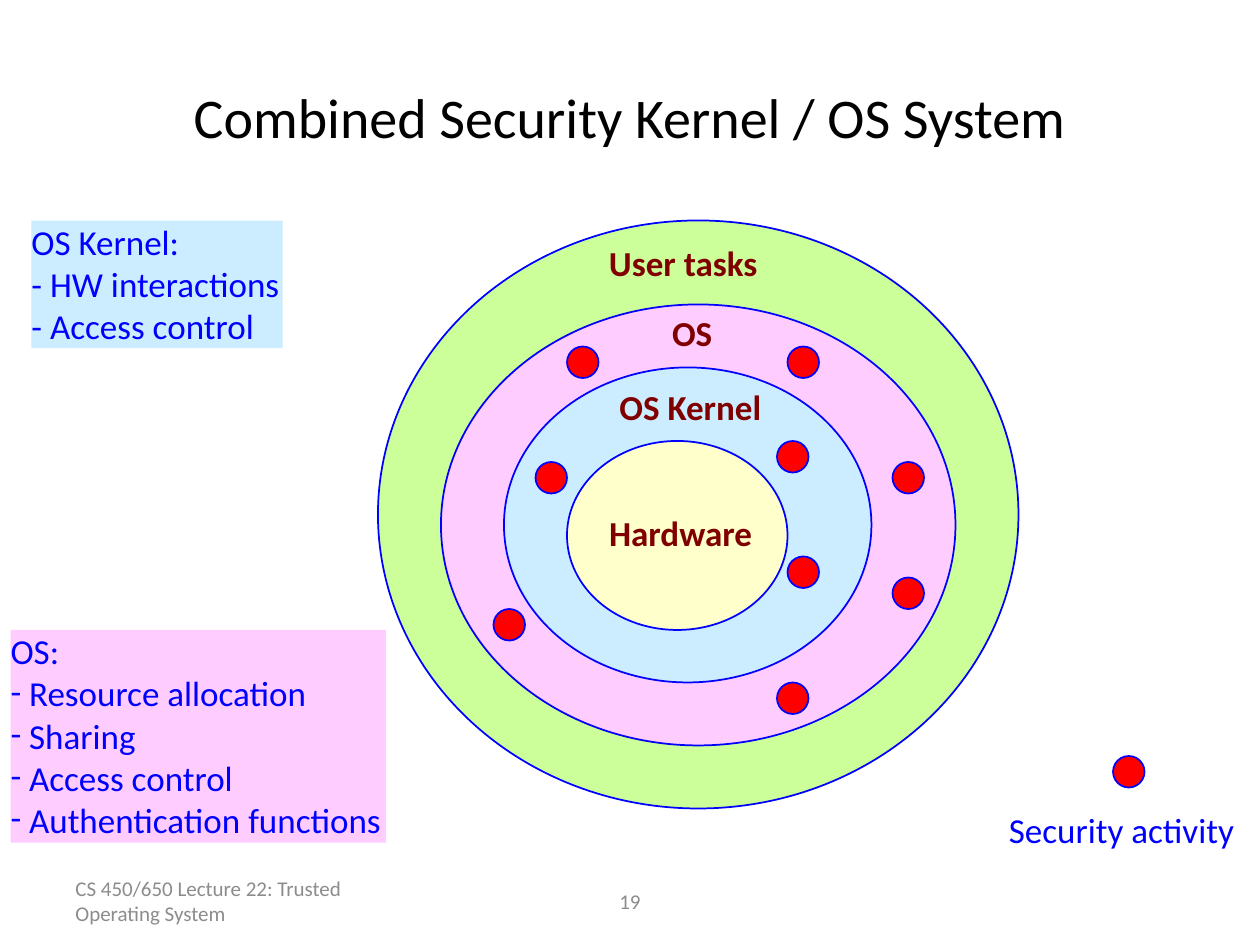
from lxml.etree import SubElement
from pptx import Presentation
from pptx.dml.color import RGBColor
from pptx.enum.shapes import MSO_SHAPE
from pptx.enum.text import MSO_ANCHOR, MSO_AUTO_SIZE, PP_ALIGN
from pptx.oxml.ns import qn
from pptx.util import Pt

BLUE, MAROON, GREY, RED = "0000FF", "800000", "8C8C8C", "FF0000"
GREEN, PINK, SKY, CREAM = "CCFF99", "FFCCFF", "CCECFF", "FFFFCC"
DOT_SIZE = 18
TIGHT = {"margin_left": 0, "margin_top": 0, "margin_right": 0, "margin_bottom": 0,
         "word_wrap": False, "auto_size": MSO_AUTO_SIZE.SHAPE_TO_FIT_TEXT,
         "vertical_anchor": MSO_ANCHOR.TOP}
MIDDLE = {"word_wrap": True, "vertical_anchor": MSO_ANCHOR.MIDDLE}

RINGS = [
    (216, 126, 366, 336, GREEN),
    (252, 174, 294, 252, PINK),
    (288, 210, 210, 180, SKY),
    (324, 252, 126, 108, CREAM),
]
RING_LABELS = [
    ("User tasks", 348, 138, 86),
    ("OS", 384, 178, 26),
    ("OS Kernel", 354, 220.5, 83),
    ("Hardware", 348, 292.5, 84),
]
KERNEL_ACTIVITIES = [(444, 252), (450, 318), (306, 264)]
OS_ACTIVITIES = [(510, 264), (510, 330), (450, 198), (324, 198), (444, 390), (282, 348)]
LEGEND_ACTIVITY = (636, 432)


def rgb(value):
    """Turn a hex string into a colour."""
    return RGBColor.from_string(value)


def apply(target, settings):
    """Set every attribute named in a dict."""
    for name, value in settings.items():
        setattr(target, name, value)


def write(frame, lines, size, color, layout, bold=False, align=PP_ALIGN.LEFT):
    """Fill a text frame with one formatted paragraph per line."""
    apply(frame, layout)
    frame.text = "\n".join(lines)
    for paragraph in frame.paragraphs:
        paragraph.alignment = align
        for run in paragraph.runs:
            apply(run.font, {"name": "Calibri", "size": Pt(size), "bold": bold})
            run.font.color.rgb = rgb(color)


def add_dash(paragraph):
    """Give a paragraph a dash as its bullet."""
    properties = paragraph._p.get_or_add_pPr()
    SubElement(properties, qn("a:buFont"), typeface="Calibri")
    SubElement(properties, qn("a:buChar"), char="-")


def add_text(slide, text, box, size, color, layout, **style):
    """Add a text box with a single paragraph."""
    label = slide.shapes.add_textbox(*map(Pt, box))
    write(label.text_frame, [text], size, color, layout, **style)


def add_filled(slide, kind, box, fill):
    """Add a flat filled shape."""
    shape = slide.shapes.add_shape(kind, *map(Pt, box))
    shape.shadow.inherit = False
    shape.fill.solid()
    shape.fill.fore_color.rgb = rgb(fill)
    return shape


def add_oval(slide, box, fill):
    """Add an ellipse with a blue outline."""
    oval = add_filled(slide, MSO_SHAPE.OVAL, box, fill)
    oval.line.color.rgb = rgb(BLUE)
    oval.line.width = Pt(1)


def add_duties(slide, box, fill, lines, dashed=False):
    """Add a coloured panel with a heading and its duties."""
    panel = add_filled(slide, MSO_SHAPE.RECTANGLE, box, fill)
    panel.line.fill.background()
    write(panel.text_frame, lines, 20, BLUE, TIGHT)
    if dashed:
        for duty in panel.text_frame.paragraphs[1:]:
            add_dash(duty)


def add_title(slide, text):
    """Place and format the slide title."""
    title = slide.shapes.title
    apply(title, {"left": Pt(36), "top": Pt(21.6), "width": Pt(648), "height": Pt(90)})
    write(title.text_frame, [text], 32, "000000", MIDDLE, align=PP_ALIGN.CENTER)


def main():
    """Build the slide and save it."""
    deck = Presentation()
    apply(deck, {"slide_width": Pt(720), "slide_height": Pt(540)})
    slide = deck.slides.add_slide(deck.slide_layouts[5])
    add_title(slide, "Combined Security Kernel / OS System")
    for *box, fill in RINGS:
        add_oval(slide, box, fill)
    for text, left, top, width in RING_LABELS:
        add_text(slide, text, (left, top, width, 24.5), 20, MAROON, TIGHT, bold=True)
    for left, top in KERNEL_ACTIVITIES + OS_ACTIVITIES + [LEGEND_ACTIVITY]:
        add_oval(slide, (left, top, DOT_SIZE, DOT_SIZE), RED)
    add_text(slide, "Security activity", (576.5, 462, 130.5, 24.5), 20, BLUE, TIGHT)
    add_duties(slide, (18, 126, 143.5, 73), SKY,
               ["OS Kernel:", "- HW interactions", "- Access control"])
    add_duties(slide, (6, 360, 214.5, 121.5), PINK,
               ["OS:", " Resource allocation", " Sharing", " Access control",
                " Authentication functions"], dashed=True)
    add_text(slide, "CS 450/650 Lecture 22: Trusted Operating System",
             (36, 500.5, 168, 28.75), 12, GREY, MIDDLE)
    add_text(slide, "19", (246, 500.5, 228, 28.75), 12, GREY, MIDDLE,
             align=PP_ALIGN.CENTER)
    deck.save("out.pptx")


if __name__ == "__main__":
    main()
